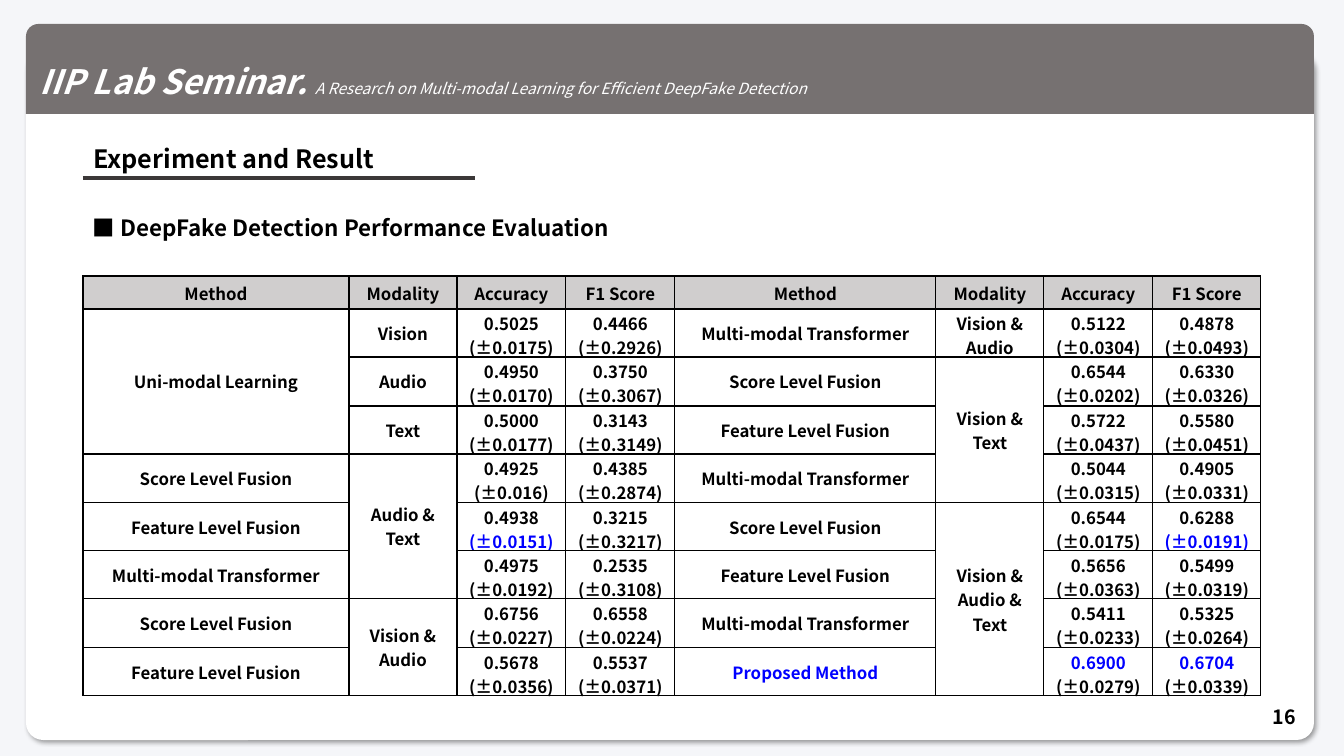
from dataclasses import dataclass
from itertools import groupby

from lxml.etree import SubElement
from pptx import Presentation
from pptx.dml.color import RGBColor
from pptx.enum.shapes import MSO_CONNECTOR, MSO_SHAPE
from pptx.enum.text import MSO_ANCHOR, MSO_AUTO_SIZE, PP_ALIGN
from pptx.oxml import parse_xml
from pptx.oxml.ns import nsdecls, qn
from pptx.text.text import TextFrame, _Run
from pptx.util import Emu, Pt

FONT = "Noto Sans CJK KR"
BLACK = RGBColor(0x00, 0x00, 0x00)
WHITE = RGBColor(0xFF, 0xFF, 0xFF)
BLUE = RGBColor(0x00, 0x00, 0xFF)
BACKGROUND = RGBColor(0xF5, 0xF6, 0xF9)
HEADER_GREY = RGBColor(0x76, 0x71, 0x71)
RULE_GREY = RGBColor(0x3B, 0x38, 0x38)
HEAD_ROW = RGBColor(0xD0, 0xCE, 0xCE)

BEST = {"(±0.0151)", "(±0.0191)", "Proposed Method", "0.6900", "0.6704"}
HEADINGS = ("Method", "Modality", "Accuracy", "F1 Score")
COLUMN_WIDTHS = (266, 108, 109, 109, 261, 108, 109, 108)
HEAD_HEIGHT, BODY_HEIGHT = 33, 387


@dataclass(frozen=True)
class Box:
    left: int
    top: int
    width: int
    height: int

    def emu(self) -> tuple[Emu, Emu, Emu, Emu]:
        return px(self.left), px(self.top), px(self.width), px(self.height)


@dataclass(frozen=True)
class Result:
    method: str
    modality: str
    accuracy: str
    f1_score: str

    def cells(self) -> tuple[str, str, str, str]:
        return self.method, self.modality, self.accuracy, self.f1_score


UNI, SCORE = "Uni-modal Learning", "Score Level Fusion"
FEATURE, TRANSFORMER = "Feature Level Fusion", "Multi-modal Transformer"
AUDIO_TEXT, VISION_AUDIO = "Audio &\nText", "Vision &\nAudio"
VISION_TEXT, ALL_THREE = "Vision &\nText", "Vision &\nAudio &\nText"

LEFT_RESULTS = (
    Result(UNI, "Vision", "0.5025\n(±0.0175)", "0.4466\n(±0.2926)"),
    Result(UNI, "Audio", "0.4950\n(±0.0170)", "0.3750\n(±0.3067)"),
    Result(UNI, "Text", "0.5000\n(±0.0177)", "0.3143\n(±0.3149)"),
    Result(SCORE, AUDIO_TEXT, "0.4925\n(±0.016)", "0.4385\n(±0.2874)"),
    Result(FEATURE, AUDIO_TEXT, "0.4938\n(±0.0151)", "0.3215\n(±0.3217)"),
    Result(TRANSFORMER, AUDIO_TEXT, "0.4975\n(±0.0192)", "0.2535\n(±0.3108)"),
    Result(SCORE, VISION_AUDIO, "0.6756\n(±0.0227)", "0.6558\n(±0.0224)"),
    Result(FEATURE, VISION_AUDIO, "0.5678\n(±0.0356)", "0.5537\n(±0.0371)"),
)
RIGHT_RESULTS = (
    Result(TRANSFORMER, VISION_AUDIO, "0.5122\n(±0.0304)", "0.4878\n(±0.0493)"),
    Result(SCORE, VISION_TEXT, "0.6544\n(±0.0202)", "0.6330\n(±0.0326)"),
    Result(FEATURE, VISION_TEXT, "0.5722\n(±0.0437)", "0.5580\n(±0.0451)"),
    Result(TRANSFORMER, VISION_TEXT, "0.5044\n(±0.0315)", "0.4905\n(±0.0331)"),
    Result(SCORE, ALL_THREE, "0.6544\n(±0.0175)", "0.6288\n(±0.0191)"),
    Result(FEATURE, ALL_THREE, "0.5656\n(±0.0363)", "0.5499\n(±0.0319)"),
    Result(TRANSFORMER, ALL_THREE, "0.5411\n(±0.0233)", "0.5325\n(±0.0264)"),
    Result("Proposed Method", ALL_THREE, "0.6900\n(±0.0279)", "0.6704\n(±0.0339)"),
)


def px(length: int) -> Emu:
    return Emu(round(length * 914400 / 100.8))


def format_run(run: _Run, size: int, color: RGBColor = BLACK,
               bold: bool = True, italic: bool = False) -> None:
    font = run.font
    font.name, font.size, font.bold, font.italic = FONT, Pt(size), bold, italic
    font.color.rgb = color
    SubElement(run.font._element, qn("a:ea"), typeface=FONT)


def fill_text(frame: TextFrame, text: str, size: int,
              alignment: PP_ALIGN = PP_ALIGN.LEFT) -> None:
    frame.text = text
    frame.word_wrap = True
    for paragraph in frame.paragraphs:
        paragraph.alignment = alignment
        for run in paragraph.runs:
            format_run(run, size, BLUE if run.text in BEST else BLACK)


def add_panel(slide, kind: MSO_SHAPE, box: Box, color: RGBColor, corner: float):
    shape = slide.shapes.add_shape(kind, *box.emu())
    shape.adjustments[0] = corner
    shape.shadow.inherit = False
    shape.fill.solid()
    shape.fill.fore_color.rgb = color
    shape.line.fill.background()
    return shape


def add_text(slide, box: Box, text: str, size: int, alignment: PP_ALIGN = PP_ALIGN.LEFT,
             anchor: MSO_ANCHOR = MSO_ANCHOR.TOP) -> None:
    frame = slide.shapes.add_textbox(*box.emu()).text_frame
    frame.vertical_anchor = anchor
    fill_text(frame, text, size, alignment)


def format_cell(cell, text: str, color: RGBColor) -> None:
    if not cell.is_spanned:
        fill_text(cell.text_frame, text, 12, PP_ALIGN.CENTER)
    cell.vertical_anchor = MSO_ANCHOR.MIDDLE
    if "\n" in text:
        cell.margin_left = cell.margin_right = px(7)
        cell.margin_top = cell.margin_bottom = px(2)
    cell.fill.solid()
    cell.fill.fore_color.rgb = color
    properties = cell._tc.get_or_add_tcPr()
    for index, side in enumerate("LRTB"):
        properties.insert(index, parse_xml(
            f'<a:ln{side} {nsdecls("a")} w="12700"><a:solidFill>'
            f'<a:srgbClr val="{BLACK}"/></a:solidFill></a:ln{side}>'))


def add_results(slide) -> None:
    rows = [HEADINGS * 2]
    rows += [left.cells() + right.cells() for left, right in zip(LEFT_RESULTS, RIGHT_RESULTS)]
    box = Box(83, 276, sum(COLUMN_WIDTHS), HEAD_HEIGHT + BODY_HEIGHT)
    table = slide.shapes.add_table(len(rows), len(COLUMN_WIDTHS), *box.emu()).table
    table.first_row = table.horz_banding = False
    for column, width in zip(table.columns, COLUMN_WIDTHS):
        column.width = px(width)
    body_count = len(rows) - 1
    edges = [round(index * BODY_HEIGHT / body_count) for index in range(body_count + 1)]
    heights = [HEAD_HEIGHT] + [end - start for start, end in zip(edges, edges[1:])]
    for row, height in zip(table.rows, heights):
        row.height = px(height)

    # Equal neighbours in the method and modality columns share one cell
    for column in (0, 1, 4, 5):
        for _, group in groupby(range(len(rows)), key=lambda row: rows[row][column]):
            members = list(group)
            if len(members) > 1:
                table.cell(members[0], column).merge(table.cell(members[-1], column))
    for row, texts in enumerate(rows):
        for column, text in enumerate(texts):
            format_cell(table.cell(row, column), text, WHITE if row else HEAD_ROW)


def main() -> None:
    presentation = Presentation()
    presentation.slide_width, presentation.slide_height = px(1344), px(756)
    slide = presentation.slides.add_slide(presentation.slide_layouts[5])
    slide.background.fill.solid()
    slide.background.fill.fore_color.rgb = BACKGROUND

    # White card with a soft shadow
    card = add_panel(slide, MSO_SHAPE.ROUNDED_RECTANGLE, Box(26, 52, 1288, 688), WHITE, 0.025)
    effects = card.element.spPr.find(qn("a:effectLst"))
    effects.append(parse_xml(
        f'<a:outerShdw {nsdecls("a")} blurRad="50800" dist="38100" dir="2700000" algn="tl" '
        f'rotWithShape="0"><a:srgbClr val="{BLACK}"><a:alpha val="40000"/></a:srgbClr>'
        '</a:outerShdw>'))

    # Header band
    header = add_panel(slide, MSO_SHAPE.ROUND_2_SAME_RECTANGLE, Box(26, 24, 1288, 90),
                       HEADER_GREY, 0.137)
    header.text_frame.vertical_anchor = MSO_ANCHOR.MIDDLE
    paragraph = header.text_frame.paragraphs[0]
    paragraph.alignment = PP_ALIGN.LEFT
    paragraph.line_spacing = 1.5
    for text, size, bold in (
            ("IIP Lab Seminar. ", 24, True),
            ("A Research on Multi-modal Learning for Efficient DeepFake Detection", 11, False)):
        run = paragraph.add_run()
        run.text = text
        format_run(run, size, WHITE, bold, italic=True)

    # Title, raised above the card, and its underline
    title = slide.shapes.title
    header.element.addnext(title.element)
    title.left, title.top, title.width, title.height = Box(83, 138, 1178, 40).emu()
    fill_text(title.text_frame, "Experiment and Result", 18)
    title.text_frame.vertical_anchor = MSO_ANCHOR.TOP
    title.text_frame.auto_size = MSO_AUTO_SIZE.NONE
    underline = slide.shapes.add_connector(
        MSO_CONNECTOR.STRAIGHT, px(83), px(178), px(475), px(178))
    underline.line.color.rgb = RULE_GREY
    underline.line.width = Pt(2.25)
    SubElement(underline.element.spPr, qn("a:effectLst"))

    # Page number, subtitle and results
    add_text(slide, Box(1004, 697, 302, 40), "16", 14, PP_ALIGN.RIGHT, MSO_ANCHOR.MIDDLE)
    add_text(slide, Box(83, 209, 1178, 37), "■ DeepFake Detection Performance Evaluation", 16)
    add_results(slide)
    presentation.save("out.pptx")


if __name__ == "__main__":
    main()
